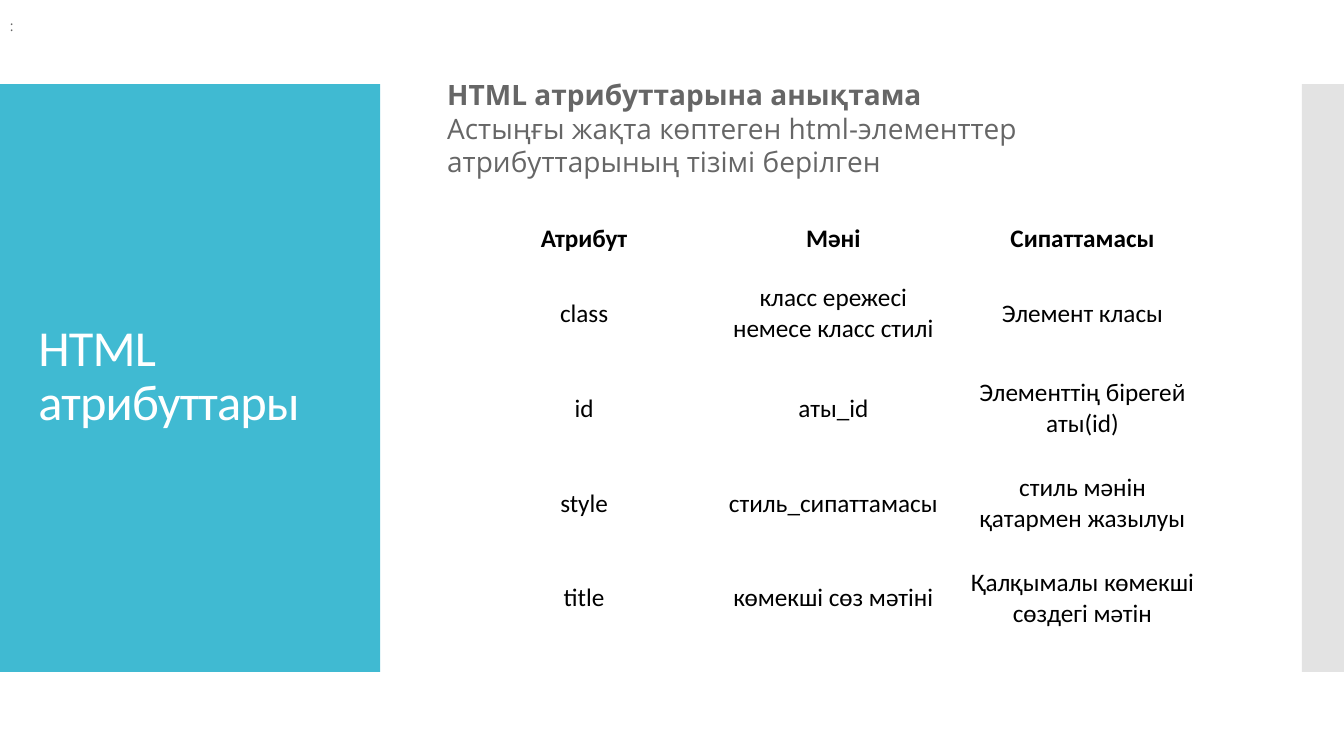
import pptx
import pptx.util
import pptx.dml.color
import pptx.enum.shapes
import pptx.enum.text
import pptx.oxml
import pptx.oxml.ns
import lxml.etree

Cm = pptx.util.Cm
Pt = pptx.util.Pt
ALIGN = pptx.enum.text.PP_ALIGN
MIDDLE = pptx.enum.text.MSO_ANCHOR.MIDDLE
FIT = pptx.enum.text.MSO_AUTO_SIZE

ROWS = [
    ["Атрибут", "Мәні", "Сипаттамасы"],
    ["class", "класс ережесі немесе класс стилі", "Элемент класы"],
    ["id", "аты_id", "Элементтің бірегей аты(id)"],
    ["style", "стиль_сипаттамасы", "стиль мәнін қатармен жазылуы"],
    ["title", "көмекші сөз мәтіні", "Қалқымалы көмекші сөздегі мәтін"],
]


def paint(target, color):
    target.fill.solid()
    target.fill.fore_color.rgb = pptx.dml.color.RGBColor.from_string(color)


def add_run(para, text, size, face, color, bold=False):
    run = para.add_run()
    run.text = text
    run.font.size = Pt(size)
    run.font.name = face
    run.font.bold = bold
    paint(run.font, color)
    return run


def add_node(parent, tag, **attrs):
    return lxml.etree.SubElement(parent, pptx.oxml.ns.qn(tag), attrs)


def add_block(slide, left, top, width, height, color, alpha=None):
    kind = pptx.enum.shapes.MSO_SHAPE.RECTANGLE
    block = slide.shapes.add_shape(kind, Cm(left), Cm(top), Cm(width), Cm(height))
    block.shadow.inherit = False
    block.line.fill.background()
    paint(block, color)
    if alpha:
        tone = block.element.spPr.find(".//" + pptx.oxml.ns.qn("a:srgbClr"))
        add_node(tone, "a:alpha", val=str(alpha * 1000))
    return block


def set_title(slide, panel):
    title = slide.shapes.title
    title.left, title.top = Cm(0.71), Cm(3.12)
    title.width, title.height = Cm(8.18), Cm(12.78)
    frame = title.text_frame
    frame.word_wrap = True
    frame.auto_size = FIT.NONE
    frame.vertical_anchor = MIDDLE
    para = frame.paragraphs[0]
    para.alignment = ALIGN.LEFT
    para.line_spacing = 0.9
    run = add_run(para, "HTML атрибуттары", 36, "Calibri", "FFFFFF")
    run.font.element.set("spc", "-60") if hasattr(run.font, "element") else run._r.get_or_add_rPr().set("spc", "-60")
    panel.element.addnext(title.element)


def set_edge(cell):
    props = cell._tc.get_or_add_tcPr()
    for spot, side in enumerate(("a:lnL", "a:lnR", "a:lnT", "a:lnB")):
        edge = pptx.oxml.parse_xml(
            f'<{side} {pptx.oxml.ns.nsdecls("a")} w="7620"><a:solidFill>'
            f'<a:srgbClr val="FFFFFF"/></a:solidFill></{side}>')
        props.insert(spot, edge)


def add_grid(slide):
    frame = slide.shapes.add_table(
        len(ROWS), len(ROWS[0]), Cm(11.58), Cm(5.33), Cm(18.84), Cm(10.94))
    table = frame.table
    for index, texts in enumerate(ROWS):
        head = index == 0
        table.rows[index].height = Cm(1.38 if head else 2.39)
        for spot, text in enumerate(texts):
            cell = table.cell(index, spot)
            cell.vertical_anchor = MIDDLE
            paint(cell, "FFFFFF")
            set_edge(cell)
            para = cell.text_frame.paragraphs[0]
            para.alignment = ALIGN.CENTER
            add_run(para, text, 18, "Calibri", "000000", head)


def add_colon(slide):
    block = add_block(slide, 0, 0.31, 0.6, 0.68, "FFFFFF")
    frame = block.text_frame
    frame.word_wrap = False
    frame.auto_size = FIT.SHAPE_TO_FIT_TEXT
    frame.vertical_anchor = MIDDLE
    para = frame.paragraphs[0]
    para.alignment = ALIGN.LEFT
    add_run(para, ":", 10, "Open Sans", "666666")


def add_intro(slide):
    box = slide.shapes.add_textbox(Cm(11.02), Cm(1.83), Cm(19.86), Cm(2.82))
    frame = box.text_frame
    frame.word_wrap = True
    frame.auto_size = FIT.SHAPE_TO_FIT_TEXT
    add_run(frame.paragraphs[0], "HTML атрибуттарына анықтама",
            20, "Open Sans", "666666", True)
    add_run(frame.add_paragraph(),
            "Астыңғы жақта көптеген html-элементтер атрибуттарының тізімі берілген",
            20, "Open Sans", "666666")


def main():
    deck = pptx.Presentation()
    deck.slide_width, deck.slide_height = Cm(33.87), Cm(19.05)
    slide = deck.slides.add_slide(deck.slide_layouts[5])
    panel = add_block(slide, 0, 2.12, 9.58, 14.81, "40BAD2")
    add_block(slide, 32.81, 2.12, 1.06, 14.81, "C8C8C8", 50)
    set_title(slide, panel)
    add_grid(slide)
    add_colon(slide)
    add_intro(slide)
    deck.save("out.pptx")


if __name__ == "__main__":
    main()
